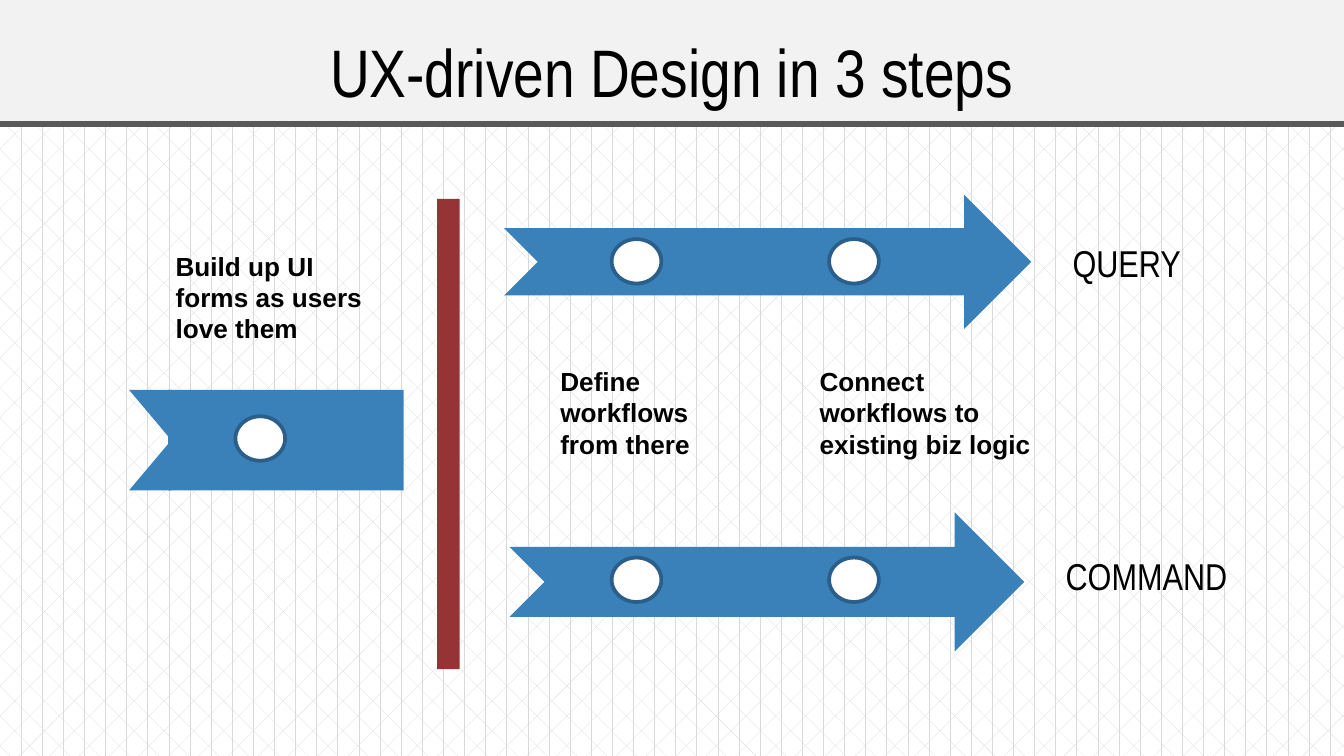
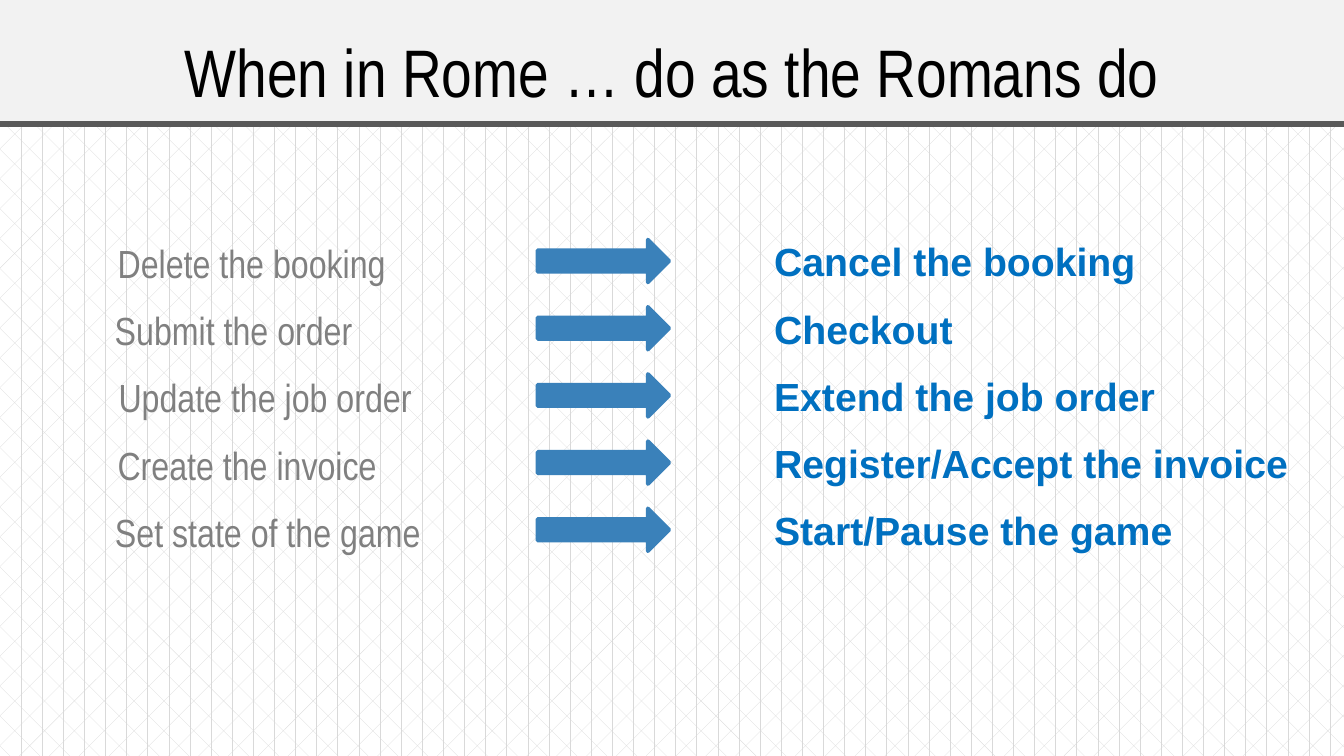
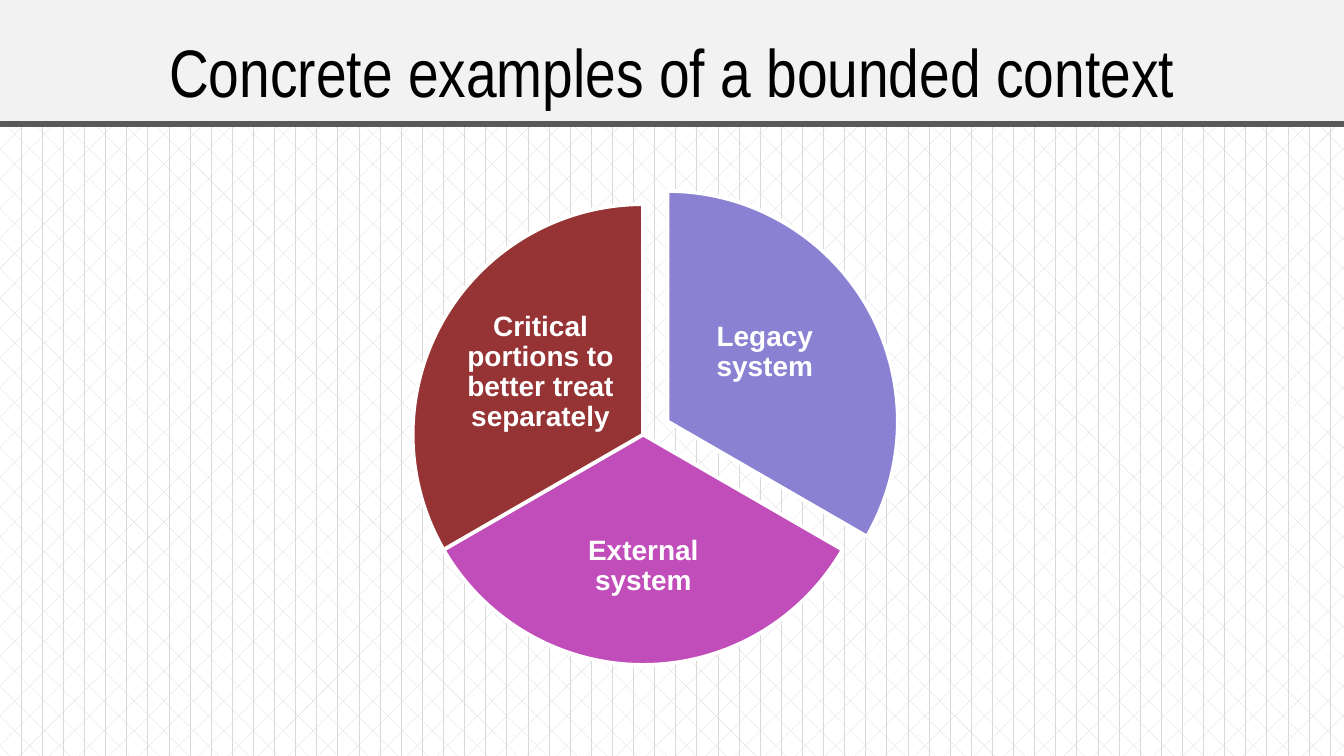
from pptx import Presentation
from pptx.dml.color import RGBColor
from pptx.enum.dml import MSO_PATTERN
from pptx.enum.shapes import MSO_SHAPE
from pptx.enum.text import MSO_ANCHOR, MSO_AUTO_SIZE, PP_ALIGN
from pptx.util import Cm, Pt

COLORS = {
    "band": "F2F2F2",
    "rule": "595959",
    "ink": "000000",
    "paper": "FFFFFF",
    "pattern": "D9D9D9",
    "flow": "3A81BA",
    "flow_edge": "2B5F8A",
    "wall": "963334",
    "technical": "808080",
    "domain": "0070C0",
    "legacy": "8B81D2",
    "external": "C14DBA",
    "critical": "963334",
}
SANS, NARROW = "Arial", "Arial Narrow"

STEPS_TITLE = "UX-driven Design in 3 steps"
FLOW_PARTS = [
    (MSO_SHAPE.RECTANGLE, (3.18, 7.37, 4.45, 1.9), "flow"),
    (MSO_SHAPE.CHEVRON, (2.44, 7.37, 1.6, 1.9), "flow"),
    (MSO_SHAPE.RECTANGLE, (8.26, 3.76, 0.43, 8.89), "wall"),
    (MSO_SHAPE.NOTCHED_RIGHT_ARROW, (9.53, 3.68, 9.96, 2.54), "flow"),
    (MSO_SHAPE.NOTCHED_RIGHT_ARROW, (9.63, 9.68, 9.73, 2.64), "flow"),
]
FORM_DOT = (4.45, 7.87)
STEP_LEFTS = (11.56, 15.67)
LANE_TOPS = (4.52, 10.54)
DOT_SIZE = (0.94, 0.84)
STEPS = [
    ("Build up UI forms as users love them", (3.07, 4.6, 4.24, 2.06)),
    ("Define workflows from there", (10.34, 6.78, 3.38, 2.06)),
    ("Connect workflows to existing biz logic", (15.24, 6.78, 4.88, 2.06)),
]
LANES = [
    ("QUERY", (20.02, 4.42, 3.58, 1.12)),
    ("COMMAND", (19.89, 10.34, 3.58, 1.12)),
]

ROME_TITLE = "When in Rome … do as the Romans do"
PHRASES = [
    ("Delete the booking", 6.27, "Cancel the booking", 7.42),
    ("Submit the order", 5.64, "Checkout", 4.14),
    ("Update the job order", 6.76, "Extend the job order", 7.8),
    ("Create the invoice", 6.1, "Register/Accept the invoice", 10.31),
    ("Set state of the game", 6.93, "Start/Pause the game", 8.1),
]
PHRASE_PITCH = 1.27
PHRASE_HEIGHT = 1.14

CONTEXT_TITLE = "Concrete examples of a bounded context"
CONTEXTS = [
    ("Legacy system", "legacy", (8.26, 3.61), (12.98, 5.21, 2.95, 2.9)),
    ("External system", "external", (7.8, 3.86), (10.19, 9.37, 3.94, 2.69)),
    ("Critical portions to better treat separately", "critical",
     (7.8, 3.86), (8.74, 5.59, 2.95, 2.9)),
]
PIE_DIAMETER = 8.71
ADJUSTMENT_PER_DEGREE = 0.6


def rgb(color):
    return RGBColor.from_string(COLORS[color])


def paint(shape, fill, line=None, width=2):
    shape.fill.solid()
    shape.fill.fore_color.rgb = rgb(fill)
    if line:
        shape.line.color.rgb = rgb(line)
        shape.line.width = Pt(width)
    else:
        shape.line.fill.background()


def write(frame, text, size, font, color, bold=False, align=PP_ALIGN.LEFT):
    frame.text = text
    paragraph = frame.paragraphs[0]
    paragraph.alignment = align
    for run in paragraph.runs:
        run.font.size = Pt(size)
        run.font.name = font
        run.font.bold = bold
        run.font.color.rgb = rgb(color)
    return paragraph


def set_insets(frame, inset):
    frame.margin_left = frame.margin_right = Cm(inset)
    frame.margin_top = frame.margin_bottom = Cm(inset)


def add_part(slide, kind, box, fill, line=None):
    part = slide.shapes.add_shape(kind, *map(Cm, box))
    part.shadow.inherit = False
    paint(part, fill, line)
    return part


def add_label(slide, text, box, size, font, color, bold=False,
              align=PP_ALIGN.LEFT, wrap=True):
    frame = slide.shapes.add_textbox(*map(Cm, box)).text_frame
    write(frame, text, size, font, color, bold, align)
    frame.word_wrap = wrap
    frame.auto_size = MSO_AUTO_SIZE.SHAPE_TO_FIT_TEXT
    return frame


def add_titled_slide(prs, heading):
    slide = prs.slides.add_slide(prs.slide_layouts[5])
    title = slide.shapes.title
    title.left, title.top, title.width, title.height = map(
        Cm, (-0.43, -0.25, 26.25, 2.6))
    paint(title, "band", "rule", 3)
    frame = title.text_frame
    write(frame, heading, 36, NARROW, "ink", align=PP_ALIGN.CENTER)
    frame.auto_size = MSO_AUTO_SIZE.NONE
    frame.vertical_anchor = MSO_ANCHOR.BOTTOM
    set_insets(frame, 0.25)
    return slide


def build_steps(prs):
    slide = add_titled_slide(prs, STEPS_TITLE)
    for kind, box, fill in FLOW_PARTS:
        add_part(slide, kind, box, fill)
    lane_dots = [(left, top) for top in LANE_TOPS for left in STEP_LEFTS]
    for corner in [FORM_DOT] + lane_dots:
        add_part(slide, MSO_SHAPE.OVAL, corner + DOT_SIZE, "paper", "flow_edge")
    for step, box in STEPS:
        add_label(slide, step, box, 14, SANS, "ink", bold=True)
    for lane, box in LANES:
        add_label(slide, lane, box, 20, NARROW, "ink")


def build_phrases(prs):
    slide = add_titled_slide(prs, ROME_TITLE)
    for row, (technical, technical_width, domain, domain_width) in enumerate(PHRASES):
        drop = row * PHRASE_PITCH
        add_label(slide, technical,
                  (1.27, 4.4 + drop, technical_width, PHRASE_HEIGHT),
                  21, NARROW, "technical", align=PP_ALIGN.RIGHT, wrap=False)
        add_part(slide, MSO_SHAPE.RIGHT_ARROW, (10.16, 4.53 + drop, 2.49, 0.81),
                 "flow", "flow")
        add_label(slide, domain,
                  (14.38, 4.37 + drop, domain_width, PHRASE_HEIGHT),
                  21, SANS, "domain", bold=True, wrap=False)


def build_contexts(prs):
    slide = add_titled_slide(prs, CONTEXT_TITLE)
    sweep = 360 / len(CONTEXTS)
    for position, (context, color, corner, label_box) in enumerate(CONTEXTS):
        start = (270 + position * sweep) % 360
        end = (start + sweep) % 360
        wedge = add_part(slide, MSO_SHAPE.PIE,
                         corner + (PIE_DIAMETER, PIE_DIAMETER), color, "paper")
        wedge.adjustments[0] = start * ADJUSTMENT_PER_DEGREE
        wedge.adjustments[1] = end * ADJUSTMENT_PER_DEGREE
        frame = add_label(slide, context, label_box, 15, SANS, "paper",
                          bold=True, align=PP_ALIGN.CENTER)
        frame.auto_size = MSO_AUTO_SIZE.NONE
        frame.vertical_anchor = MSO_ANCHOR.MIDDLE
        set_insets(frame, 0.05)
        frame.paragraphs[0].line_spacing = 0.9


def main():
    prs = Presentation()
    prs.slide_width, prs.slide_height = Cm(25.4), Cm(14.29)
    backdrop = prs.slide_master.background.fill
    backdrop.patterned()
    backdrop.pattern = MSO_PATTERN.DIVOT
    backdrop.fore_color.rgb = rgb("pattern")
    backdrop.back_color.rgb = rgb("paper")
    build_steps(prs)
    build_phrases(prs)
    build_contexts(prs)
    prs.save("out.pptx")


if __name__ == "__main__":
    main()
